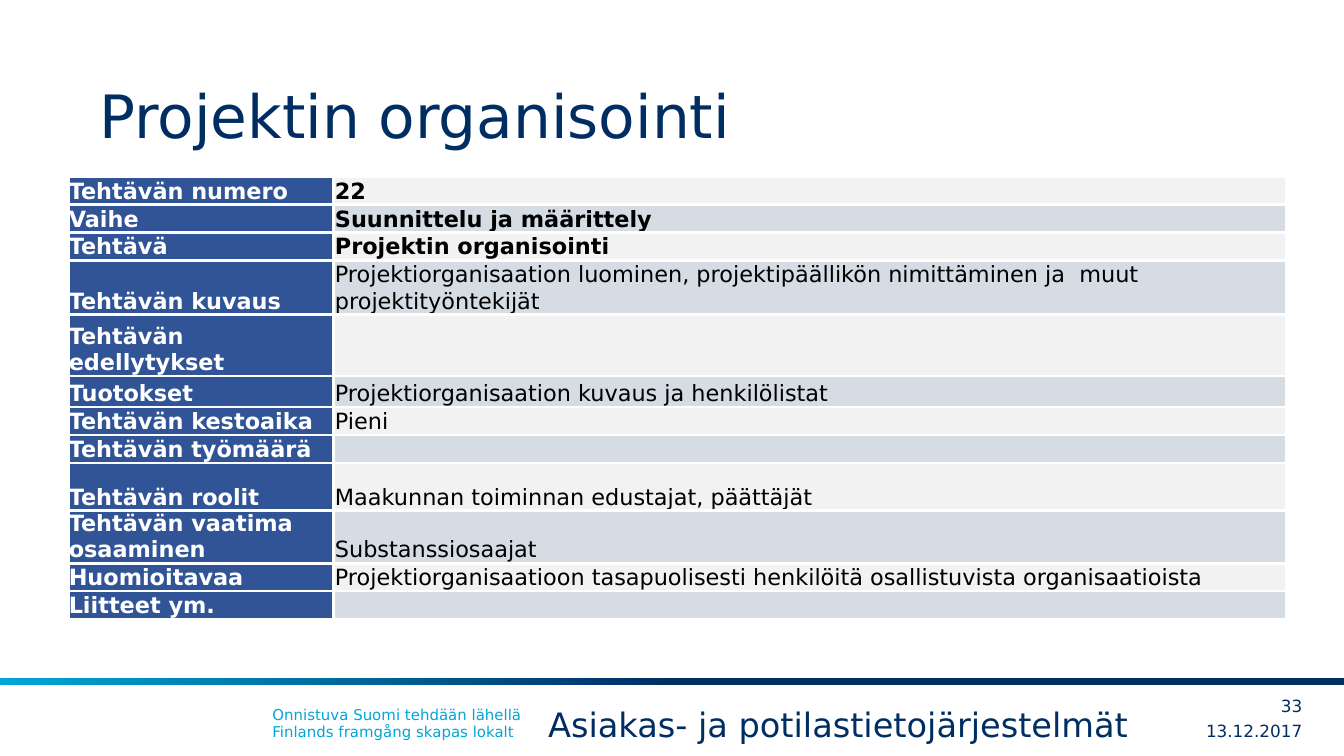
from dataclasses import dataclass
from lxml.etree import SubElement
from pptx import Presentation
from pptx.dml.color import RGBColor
from pptx.enum.shapes import MSO_SHAPE
from pptx.enum.text import MSO_ANCHOR, PP_ALIGN
from pptx.oxml.ns import qn
from pptx.slide import Slide
from pptx.table import _Cell
from pptx.text.text import _Paragraph
from pptx.util import Cm, Pt


@dataclass(frozen=True)
class Theme:
    font: str = "DejaVu Sans"
    navy: str = "002E63"
    cyan: str = "00A6D6"
    blue: str = "305496"
    white: str = "FFFFFF"
    black: str = "000000"
    bands: tuple[str, str] = ("F2F2F2", "D6DCE4")
    title: float = 32
    topic: float = 18
    body: float = 12
    meta: float = 9
    motto: float = 8
    rule: float = 1.5


@dataclass(frozen=True)
class Label:
    text: str
    left: float
    top: float
    width: float
    height: float
    size: float
    color: str
    pad: tuple[float, float] = (0, 0)
    anchor: MSO_ANCHOR = MSO_ANCHOR.TOP
    align: PP_ALIGN = PP_ALIGN.LEFT
    wrap: bool = True


@dataclass(frozen=True)
class Row:
    head: str
    text: str = ""
    height: float = 0.51
    bold: bool = False


THEME = Theme()
INSET = (0.25, 0.13)

LABELS = [
    Label("Onnistuva Suomi tehdään lähellä\vFinlands framgång skapas lokalt",
          4.9, 13.2, 16.6, 0.95, THEME.motto, THEME.cyan, INSET),
    Label("13.12.2017", 22.1, 13.54, 2.51, 0.56, THEME.meta, THEME.navy,
          anchor=MSO_ANCHOR.MIDDLE, align=PP_ALIGN.RIGHT),
    Label("33", 23.52, 13.06, 1.09, 0.56, THEME.meta, THEME.navy,
          anchor=MSO_ANCHOR.MIDDLE, align=PP_ALIGN.RIGHT),
    Label("Projektin organisointi", 1.88, 0.58, 21.62, 2.39, THEME.title,
          THEME.navy, (0, 0.13), MSO_ANCHOR.BOTTOM),
    Label("Asiakas- ja potilastietojärjestelmät", 10.11, 13.18, 11.76, 1.02,
          THEME.topic, THEME.navy, INSET, wrap=False),
]

ROWS = [
    Row("Tehtävän numero", "22", bold=True),
    Row("Vaihe", "Suunnittelu ja määrittely", bold=True),
    Row("Tehtävä", "Projektin organisointi", bold=True),
    Row("Tehtävän kuvaus",
        "Projektiorganisaation luominen, projektipäällikön nimittäminen "
        "ja  muut projektityöntekijät", 1.02),
    Row("Tehtävän edellytykset", height=1.16),
    Row("Tuotokset", "Projektiorganisaation kuvaus ja henkilölistat", 0.59),
    Row("Tehtävän kestoaika", "Pieni"),
    Row("Tehtävän työmäärä"),
    Row("Tehtävän roolit", "Maakunnan toiminnan edustajat, päättäjät", 0.9),
    Row("Tehtävän vaatima osaaminen", "Substanssiosaajat", 1.0),
    Row("Huomioitavaa", "Projektiorganisaatioon tasapuolisesti henkilöitä "
        "osallistuvista organisaatioista"),
    Row("Liitteet ym."),
]


def style(para: _Paragraph, size: float, color: str,
          bold: bool = False) -> None:
    font = para.font
    font.name = THEME.font
    font.size = Pt(size)
    font.bold = bold
    font.color.rgb = RGBColor.from_string(color)


def add_label(slide: Slide, label: Label) -> None:
    box = slide.shapes.add_textbox(Cm(label.left), Cm(label.top),
                                   Cm(label.width), Cm(label.height))
    frame = box.text_frame
    frame.word_wrap = label.wrap
    frame.vertical_anchor = label.anchor
    frame.margin_left = frame.margin_right = Cm(label.pad[0])
    frame.margin_top = frame.margin_bottom = Cm(label.pad[1])
    para = frame.paragraphs[0]
    para.text = label.text
    para.alignment = label.align
    style(para, label.size, label.color)


def add_stripe(slide: Slide) -> None:
    bar = slide.shapes.add_shape(MSO_SHAPE.RECTANGLE, Cm(0), Cm(12.82),
                                 Cm(25.4), Cm(0.13))
    bar.shadow.inherit = False
    bar.line.fill.background()
    bar.fill.gradient()
    bar.fill.gradient_angle = 180
    stops = [(0.5, THEME.navy), (1, THEME.cyan)]
    for stop, (place, color) in zip(bar.fill.gradient_stops, stops):
        stop.position = place
        stop.color.rgb = RGBColor.from_string(color)


def add_borders(cell: _Cell) -> None:
    props = cell._tc.get_or_add_tcPr()
    for index, side in enumerate(("lnL", "lnR", "lnT", "lnB")):
        line = props.makeelement(qn(f"a:{side}"), {"w": str(Pt(THEME.rule))})
        fill = SubElement(line, qn("a:solidFill"))
        SubElement(fill, qn("a:srgbClr"), val=THEME.white)
        props.insert(index, line)


def fill_cell(cell: _Cell, text: str, back: str, color: str, bold: bool,
              pad: float) -> None:
    cell.fill.solid()
    cell.fill.fore_color.rgb = RGBColor.from_string(back)
    cell.vertical_anchor = MSO_ANCHOR.BOTTOM
    cell.margin_left = cell.margin_right = cell.margin_top = Cm(pad)
    cell.margin_bottom = Cm(0)
    para = cell.text_frame.paragraphs[0]
    style(para, THEME.body, color, bold)
    if text:
        para.text = text
    else:
        SubElement(para._p, qn("a:endParaRPr"), sz=str(int(THEME.body * 100)))
    add_borders(cell)


def add_grid(slide: Slide, rows: list[Row]) -> None:
    widths = (5, 18)
    total = sum(row.height for row in rows)
    grid = slide.shapes.add_table(len(rows), len(widths), Cm(1.3), Cm(3.34),
                                  Cm(sum(widths)), Cm(total)).table
    for column, width in zip(grid.columns, widths):
        column.width = Cm(width)
    for index, row in enumerate(rows):
        grid.rows[index].height = Cm(row.height)
        band = THEME.bands[index % 2]
        fill_cell(grid.cell(index, 0), row.head, THEME.blue, THEME.white,
                  True, 0)
        fill_cell(grid.cell(index, 1), row.text, band, THEME.black,
                  row.bold, 0.03)


def main() -> None:
    deck = Presentation()
    deck.slide_width = Cm(25.4)
    deck.slide_height = Cm(14.29)
    slide = deck.slides.add_slide(deck.slide_layouts[6])
    add_stripe(slide)
    add_grid(slide, ROWS)
    for label in LABELS:
        add_label(slide, label)
    deck.save("out.pptx")


if __name__ == "__main__":
    main()
